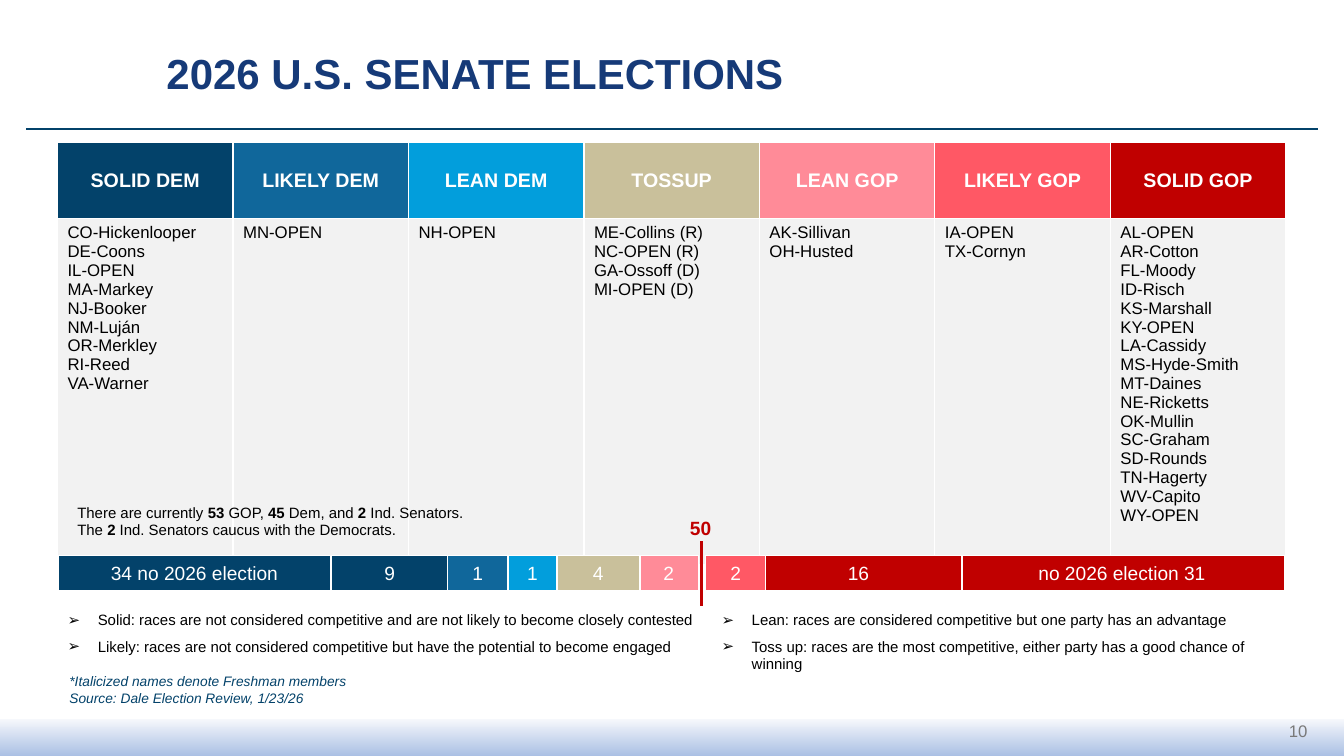
"""Build the 2026 U.S. Senate elections ratings slide."""
from lxml import etree
from pptx import Presentation
from pptx.dml.color import RGBColor
from pptx.enum import shapes, text
from pptx.oxml import ns
from pptx.util import Cm, Pt

NAVY, BLUE, SKY, TAN = "03426A", "10679B", "029EDC", "C9C09B"
PINK, CORAL, RED = "FF8B98", "FF5865", "C00000"
WHITE, BLACK, PALE = "FFFFFF", "000000", "F2F2F2"
CENTER, MIDDLE = text.PP_ALIGN.CENTER, text.MSO_ANCHOR.MIDDLE

TITLE = "2026 U.S. SENATE ELECTIONS"
RATINGS = [
    ("SOLID DEM", NAVY, ["CO-Hickenlooper", "DE-Coons", "IL-OPEN", "MA-Markey", "NJ-Booker",
                         "NM-Luján", "OR-Merkley", "RI-Reed", "VA-Warner"]),
    ("LIKELY DEM", BLUE, ["MN-OPEN"]),
    ("LEAN DEM", SKY, ["NH-OPEN"]),
    ("TOSSUP", TAN, ["ME-Collins (R)", "NC-OPEN (R)", "GA-Ossoff (D)", "MI-OPEN (D)"]),
    ("LEAN GOP", PINK, ["AK-Sillivan", "OH-Husted"]),
    ("LIKELY GOP", CORAL, ["IA-OPEN", "TX-Cornyn"]),
    ("SOLID GOP", RED, ["AL-OPEN", "AR-Cotton", "FL-Moody", "ID-Risch", "KS-Marshall", "KY-OPEN",
                        "LA-Cassidy", "MS-Hyde-Smith", "MT-Daines", "NE-Ricketts", "OK-Mullin",
                        "SC-Graham", "SD-Rounds", "TN-Hagerty", "WV-Capito", "WY-OPEN"]),
]
SEATS = [
    ("34 no 2026 election", 1.47, 6.86, NAVY),
    ("9", 8.36, 2.92, NAVY),
    ("1", 11.28, 1.52, BLUE),
    ("1", 12.8, 1.24, SKY),
    ("4", 14.02, 2.11, TAN),
    ("2", 16.1, 1.5, PINK),
    ("2", 17.78, 1.52, CORAL),
    ("16", 19.02, 5.23, RED),
    ("no 2026 election 31", 24.16, 8.23, RED),
]
BALANCE = ["There are currently |53| GOP, |45| Dem, and |2| Ind. Senators.",
           "The |2| Ind. Senators caucus with the Democrats."]
DEFINITIONS = [
    (1.45, 16.74, [
        "Solid: races are not considered competitive and are not likely to become closely contested",
        "Likely: races are not considered competitive but have the potential to become engaged"]),
    (17.93, 14.48, [
        "Lean: races are considered competitive but one party has an advantage",
        "Toss up: races are the most competitive, either party has a good chance of winning"]),
]
SOURCE = ["*Italicized names denote Freshman members", "Source: Dale Election Review, 1/23/26"]


def rgb(value):
    """Turn a hex string into a colour."""
    return RGBColor.from_string(value)


def write(tf, lines, size=12, color=BLACK, bold=False, italic=False, align=text.PP_ALIGN.LEFT,
          gap=0, bullet=None):
    """Fill a text frame, one paragraph a line, with |marked| parts in bold."""
    for i, line in enumerate(lines):
        p = tf.paragraphs[0] if i == 0 else tf.add_paragraph()
        p.alignment = align
        p.space_before, p.space_after = Pt(gap if i else 0), Pt(gap)
        if bullet:
            pPr = p._p.get_or_add_pPr()
            pPr.set("marL", str(Cm(0.76)))
            pPr.set("indent", str(-Cm(0.76)))
            etree.SubElement(pPr, ns.qn("a:buChar")).set("char", bullet)
        for j, part in enumerate(line.split("|")):
            r = p.add_run()
            r.text = part
            r.font.name, r.font.size = "Arial", Pt(size)
            r.font.bold, r.font.italic = bold or j % 2 == 1, italic
            r.font.color.rgb = rgb(color)


def place(sp, left, top, width, height):
    """Move and size a shape, in centimetres."""
    sp.left, sp.top, sp.width, sp.height = map(Cm, (left, top, width, height))


def add_label(s, box, lines, anchor=MIDDLE, **style):
    """Add a wrapping text box."""
    tf = s.shapes.add_textbox(*map(Cm, box)).text_frame
    tf.word_wrap, tf.vertical_anchor = True, anchor
    write(tf, lines, **style)


def add_rect(s, left, top, width, height):
    """Add a rectangle without shadow."""
    sp = s.shapes.add_shape(shapes.MSO_SHAPE.RECTANGLE, *map(Cm, (left, top, width, height)))
    sp.shadow.inherit = False
    return sp


def add_line(s, ends, color, weight):
    """Add a straight line without shadow."""
    c = s.shapes.add_connector(shapes.MSO_CONNECTOR.STRAIGHT, *map(Cm, ends))
    c.line.color.rgb, c.line.width = rgb(color), Pt(weight)
    etree.SubElement(c._element.spPr, ns.qn("a:effectLst"))


def style_cell(cell, fill):
    """Set a cell's fill and thin white borders."""
    cell.fill.solid()
    cell.fill.fore_color.rgb = rgb(fill)
    tcPr = cell._tc.get_or_add_tcPr()
    for i, side in enumerate(("a:lnL", "a:lnR", "a:lnT", "a:lnB")):
        ln = etree.Element(ns.qn(side), w=str(Pt(1)))
        solid = etree.SubElement(ln, ns.qn("a:solidFill"))
        etree.SubElement(solid, ns.qn("a:srgbClr")).set("val", WHITE)
        tcPr.insert(i, ln)


def add_ratings(s):
    """Add the table of races by rating."""
    table = s.shapes.add_table(2, len(RATINGS), *map(Cm, (1.45, 3.58, 30.96, 10.64))).table
    table.rows[0].height, table.rows[1].height = Cm(1.93), Cm(8.71)
    for col, (rating, color, races) in enumerate(RATINGS):
        head, body = table.cell(0, col), table.cell(1, col)
        style_cell(head, color)
        style_cell(body, PALE)
        head.margin_left = head.margin_right = head.margin_top = head.margin_bottom = 0
        head.vertical_anchor = MIDDLE
        write(head.text_frame, [rating], size=14, color=WHITE, bold=True, align=CENTER)
        write(body.text_frame, races)


def main():
    """Lay out the slide and save it."""
    prs = Presentation()
    prs.slide_width, prs.slide_height = Cm(33.87), Cm(19.05)
    s = prs.slides.add_slide(prs.slide_layouts[3])
    title, *lists = s.placeholders

    band = add_rect(s, 0, 18.11, 33.87, 0.94)
    band.line.fill.background()
    band.fill.gradient()
    band.fill.gradient_angle = 270
    for stop, color in zip(band.fill.gradient_stops, ("F6F8FC", "ABC0E4")):
        stop.color.rgb = rgb(color)
    add_line(s, (0.66, 3.25, 33.22, 3.25), NAVY, 1.5)
    add_label(s, (31.9, 17.78, 1.3, 1.27), ["10"], color="797979", align=text.PP_ALIGN.RIGHT)

    place(title, 3.94, 0.74, 29.29, 2.34)
    tf = title.text_frame
    tf.auto_size, tf.vertical_anchor = text.MSO_AUTO_SIZE.NONE, MIDDLE
    write(tf, [TITLE], size=30, color="163A78", bold=True)
    tf.paragraphs[0].line_spacing = 0.9

    add_ratings(s)
    add_label(s, (1.5, 16.86, 30.96, 1.05), SOURCE, anchor=text.MSO_ANCHOR.BOTTOM,
              size=9.8, color=NAVY, italic=True)
    add_label(s, (1.7, 12.47, 13.84, 1.32), BALANCE, size=10.7)

    for seats, left, width, color in reversed(SEATS):
        sp = add_rect(s, left, 14, width, 0.89)
        sp.fill.solid()
        sp.fill.fore_color.rgb = rgb(color)
        sp.line.color.rgb, sp.line.width = rgb(WHITE), Pt(1)
        sp.text_frame.word_wrap, sp.text_frame.vertical_anchor = True, MIDDLE
        write(sp.text_frame, [seats], size=13.7, color=WHITE, align=CENTER)

    add_label(s, (16.08, 12.75, 3.15, 1.09), ["50"], size=13.7, color=RED, bold=True, align=CENTER)
    add_line(s, (17.68, 13.64, 17.68, 15.27), RED, 2.25)

    for sp, (left, width, lines) in zip(lists, DEFINITIONS):
        place(sp, left, 15.27, width, 1.6)
        sp.text_frame.auto_size = text.MSO_AUTO_SIZE.NONE
        write(sp.text_frame, lines, size=10.7, gap=2.9, bullet="➢")

    prs.save("out.pptx")


if __name__ == "__main__":
    main()
